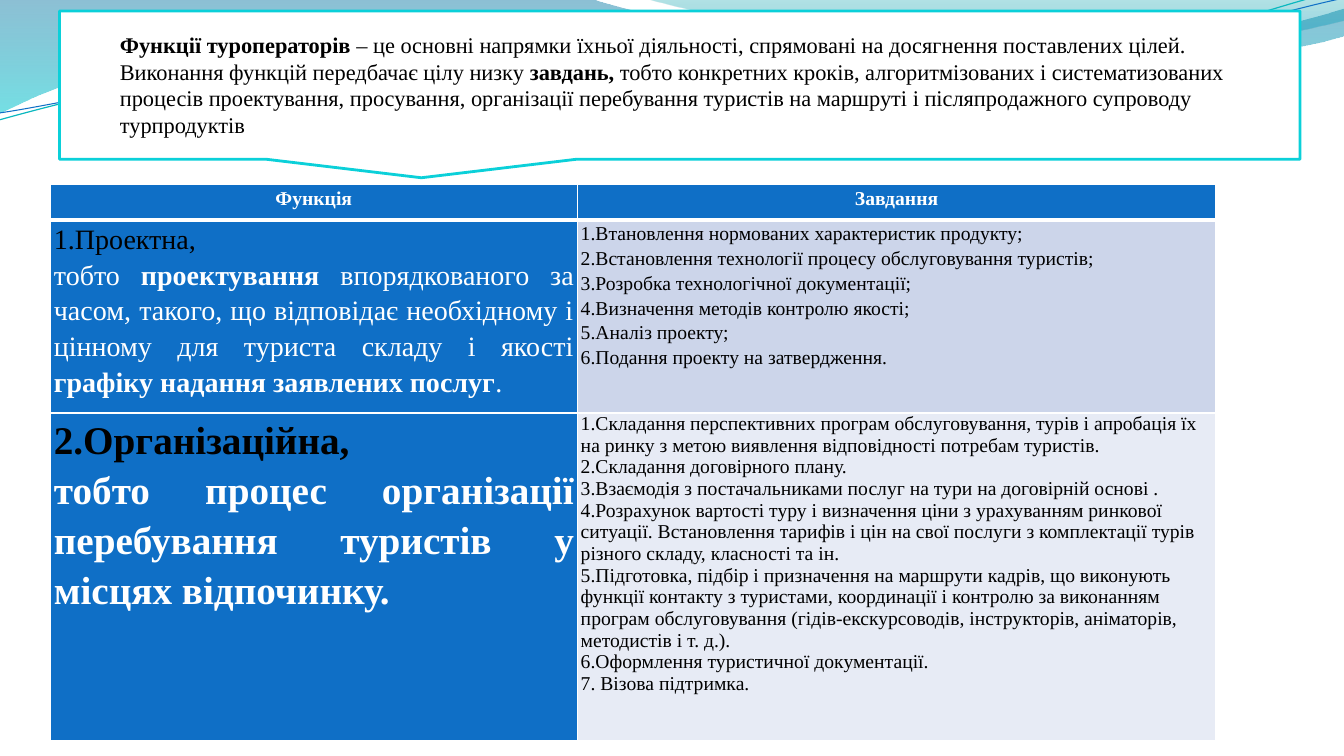
from dataclasses import dataclass

import pptx
import pptx.dml.color
import pptx.enum.shapes
import pptx.enum.text
import pptx.oxml
import pptx.oxml.ns
import pptx.util

ALIGN = pptx.enum.text.PP_ALIGN
Point = tuple[float, float]


@dataclass(frozen=True)
class Theme:
    font: str = "Times New Roman"
    white: str = "FFFFFF"
    black: str = "000000"
    blue: str = "0F6FC6"
    teal: str = "0AB8BF"
    cyan: str = "0BD0D9"
    band_dark: str = "CCD5EA"
    band_light: str = "E7EBF5"
    body_size: int = 14
    intro_size: int = 16
    project_size: int = 20
    organisation_size: int = 28


@dataclass(frozen=True)
class Stop:
    position: int
    color: str
    opacity: int


@dataclass(frozen=True)
class Wave:
    start: Point
    segments: tuple[tuple[Point, ...], ...]
    stops: tuple[Stop, ...] = ()
    line_color: str = ""
    line_width: float = 0


@dataclass(frozen=True)
class Line:
    text: str
    color: str


@dataclass(frozen=True)
class Cell:
    lines: tuple[Line, ...]
    fill: str
    size: int
    align: ALIGN | None = ALIGN.JUSTIFY
    spacing: float | None = 1.15
    bottom_border: float = 1


THEME = Theme()
WIDTH = pptx.util.Inches(13.33)
HEIGHT = pptx.util.Inches(7.5)

WAVES = (
    Wave((-0.08, 0), (
        ((44.03, -0.13),),
        ((47.55, 2.27), (66.38, 8.4), (75.83, 8.4)),
        ((85.35, 8.4), (95.85, 3.47), (100, 1.2)),
        ((100.13, 4.8),),
        ((98.33, 5.87), (87, 10.13), (74.55, 10)),
        ((62.18, 10), (38.18, 3.73), (25.73, 4.53)),
        ((12.9, 4.8), (4.58, 11.07), (-0.08, 15.07)),
    ), stops=(Stop(0, "0074A1", 45), Stop(100, "00C6CF", 55))),
    Wave((47.93, -0.13), (
        ((50.93, 1.47), (68.18, 8.27), (76.88, 8.67)),
        ((85.58, 9.2), (96.15, 4.27), (100, 2.8)),
        ((100, 0),),
    ), stops=(Stop(0, "00A1A9", 30), Stop(80, "008BBF", 45))),
    Wave((-0.08, 15.87), (
        ((4.8, 13.47), (15.83, 8.27), (27.68, 7.33)),
        ((39.53, 6.4), (59.25, 11.6), (71.25, 10.13)),
        ((83.25, 8.8), (93.9, 1.07), (99.83, -1.33)),
    ), line_color=THEME.teal, line_width=0.85),
    Wave((0, 14.93), (
        ((4.73, 13.73), (16.35, 8.8), (28.35, 7.87)),
        ((40.28, 7.07), (59.7, 10.93), (71.63, 9.6)),
        ((83.63, 8.27), (94.13, 1.87), (100.05, -0.27)),
    ), line_color=THEME.blue, line_width=0.75),
)

INTRO = Line(
    "**Функції туроператорів** – це основні напрямки їхньої діяльності, спрямовані на досягнення "
    "поставлених цілей. Виконання функцій передбачає цілу низку **завдань,** тобто конкретних кроків, "
    "алгоритмізованих і систематизованих процесів проектування, просування, організації перебування "
    "туристів на маршруті і післяпродажного супроводу турпродуктів", THEME.black)


def black_lines(*texts: str) -> tuple[Line, ...]:
    return tuple(Line(text, THEME.black) for text in texts)


def header(title: str) -> Cell:
    return Cell((Line(f"**{title}**", THEME.white),), THEME.blue, THEME.body_size, ALIGN.CENTER, bottom_border=3)


COLUMN_SHARES = (39.2, 47.53)
ROW_SHARES = (4.67, 25.47, 43.33)
ROWS = (
    (header("Функція"), header("Завдання")),
    (
        Cell((
            Line("1.Проектна, ", THEME.black),
            Line("тобто **проектування **впорядкованого за часом, такого, що відповідає необхідному і "
                 "цінному для туриста складу і якості **графіку надання заявлених послуг**.", THEME.white),
        ), THEME.blue, THEME.project_size),
        Cell(black_lines(
            "1.Втановлення нормованих характеристик продукту;",
            "2.Встановлення технології процесу обслуговування туристів;",
            "3.Розробка технологічної документації;",
            "4.Визначення методів контролю якості;",
            "5.Аналіз проекту;",
            "6.Подання проекту на затвердження.",
        ), THEME.band_dark, THEME.body_size),
    ),
    (
        Cell((
            Line("**2.Організаційна,**", THEME.black),
            Line("**тобто процес організації перебування туристів у місцях відпочинку.**", THEME.white),
        ), THEME.blue, THEME.organisation_size),
        Cell(black_lines(
            "1.Складання перспективних програм обслуговування, турів і апробація їх на ринку з метою "
            "виявлення відповідності потребам туристів.",
            "2.Складання договірного плану.",
            "3.Взаємодія з постачальниками послуг на тури на договірній основі .",
            "4.Розрахунок вартості туру і визначення ціни з урахуванням ринкової ситуації. Встановлення "
            "тарифів і цін на свої послуги з комплектації турів різного складу, класності та ін.",
            "5.Підготовка, підбір і призначення на маршрути кадрів, що виконують функції контакту з "
            "туристами, координації і контролю за виконанням програм обслуговування (гідів-екскурсоводів, "
            "інструкторів, аніматорів, методистів і т. д.).",
            "6.Оформлення туристичної документації.",
            "7. Візова підтримка.",
        ), THEME.band_light, THEME.body_size, None, None),
    ),
)


def rgb(color: str) -> pptx.dml.color.RGBColor:
    return pptx.dml.color.RGBColor.from_string(color)


def across(share: float) -> int:
    return round(WIDTH * share / 100)


def down(share: float) -> int:
    return round(HEIGHT * share / 100)


def area(left: float, top: float, width: float, height: float) -> tuple[int, int, int, int]:
    return across(left), down(top), across(width), down(height)


def xml(tag: str, attributes: str, content: str):
    return pptx.oxml.parse_xml(f"<a:{tag} {pptx.oxml.ns.nsdecls('a')} {attributes}>{content}</a:{tag}>")


def bend_segments(shape: pptx.shapes.autoshape.Shape, wave: Wave) -> None:
    straight_parts = list(shape.element.spPr.iter(pptx.oxml.ns.qn("a:lnTo")))
    for straight, segment in zip(straight_parts, wave.segments):
        if len(segment) == 3:
            points = "".join(
                f'<a:pt x="{across(x) - shape.left}" y="{down(y) - shape.top}"/>' for x, y in segment)
            straight.getparent().replace(straight, xml("cubicBezTo", "", points))


def draw_wave(slide: pptx.slide.Slide, wave: Wave) -> None:
    builder = slide.shapes.build_freeform(across(wave.start[0]), down(wave.start[1]))
    ends = [(across(segment[-1][0]), down(segment[-1][1])) for segment in wave.segments]
    builder.add_line_segments(ends, close=bool(wave.stops))
    shape = builder.convert_to_shape()
    bend_segments(shape, wave)
    shape.shadow.inherit = False
    if wave.stops:
        shape.line.fill.background()
        stops = "".join(
            f'<a:gs pos="{stop.position * 1000}"><a:srgbClr val="{stop.color}">'
            f'<a:alpha val="{stop.opacity * 1000}"/></a:srgbClr></a:gs>' for stop in wave.stops)
        gradient = xml("gradFill", 'rotWithShape="1"', f'<a:gsLst>{stops}</a:gsLst><a:lin ang="5400000" scaled="1"/>')
        shape.element.spPr.find(pptx.oxml.ns.qn("a:custGeom")).addnext(gradient)
    else:
        shape.fill.background()
        shape.line.color.rgb = rgb(wave.line_color)
        shape.line.width = pptx.util.Pt(wave.line_width)


def write_line(paragraph: pptx.text.text._Paragraph, line: Line, size: int) -> None:
    pieces = [(text, index % 2 == 1) for index, text in enumerate(line.text.split("**")) if text]
    paragraph.text = pieces[0][0]
    for text, _ in pieces[1:]:
        paragraph.add_run().text = text
    for run, (_, bold) in zip(paragraph.runs, pieces):
        run.font.name, run.font.size, run.font.bold = THEME.font, pptx.util.Pt(size), bold
        run.font.color.rgb = rgb(line.color)


def draw_intro(slide: pptx.slide.Slide) -> None:
    callout = slide.shapes.add_shape(
        pptx.enum.shapes.MSO_SHAPE.RECTANGULAR_CALLOUT, *area(4.43, 1.47, 92.3, 19.6))
    callout.shadow.inherit = False
    callout.fill.solid()
    callout.fill.fore_color.rgb = rgb(THEME.white)
    callout.line.color.rgb = rgb(THEME.cyan)
    callout.line.width = pptx.util.Pt(2)
    text_frame = slide.shapes.add_textbox(*area(8.18, 3.42, 88.5, 15.73)).text_frame
    text_frame.word_wrap = True
    text_frame.auto_size = pptx.enum.text.MSO_AUTO_SIZE.SHAPE_TO_FIT_TEXT
    write_line(text_frame.paragraphs[0], INTRO, THEME.intro_size)


def fill_cell(target: pptx.table._Cell, cell: Cell) -> None:
    target.margin_left = target.margin_right = pptx.util.Pt(2.5)
    target.margin_top = target.margin_bottom = 0
    properties = target._tc.get_or_add_tcPr()
    for side, width in (("L", 1), ("R", 1), ("T", 1), ("B", cell.bottom_border)):
        properties.append(xml(f"ln{side}", f'w="{pptx.util.Pt(width)}"',
                              f'<a:solidFill><a:srgbClr val="{THEME.white}"/></a:solidFill>'))
    target.fill.solid()
    target.fill.fore_color.rgb = rgb(cell.fill)
    target.text_frame.text = "\n".join(line.text for line in cell.lines)
    for paragraph, line in zip(target.text_frame.paragraphs, cell.lines):
        paragraph.alignment, paragraph.line_spacing = cell.align, cell.spacing
        write_line(paragraph, line, cell.size)


def draw_table(slide: pptx.slide.Slide) -> None:
    frame = slide.shapes.add_table(
        len(ROWS), len(COLUMN_SHARES), *area(3.75, 24.4, sum(COLUMN_SHARES), sum(ROW_SHARES)))
    table = frame.table
    for column, share in zip(table.columns, COLUMN_SHARES):
        column.width = across(share)
    for row_index, (row, share) in enumerate(zip(ROWS, ROW_SHARES)):
        table.rows[row_index].height = down(share)
        for column_index, cell in enumerate(row):
            fill_cell(table.cell(row_index, column_index), cell)


def main() -> None:
    presentation = pptx.Presentation()
    presentation.slide_width, presentation.slide_height = WIDTH, HEIGHT
    slide = presentation.slides.add_slide(presentation.slide_layouts[6])
    for wave in WAVES:
        draw_wave(slide, wave)
    draw_intro(slide)
    draw_table(slide)
    presentation.save("out.pptx")


if __name__ == "__main__":
    main()
